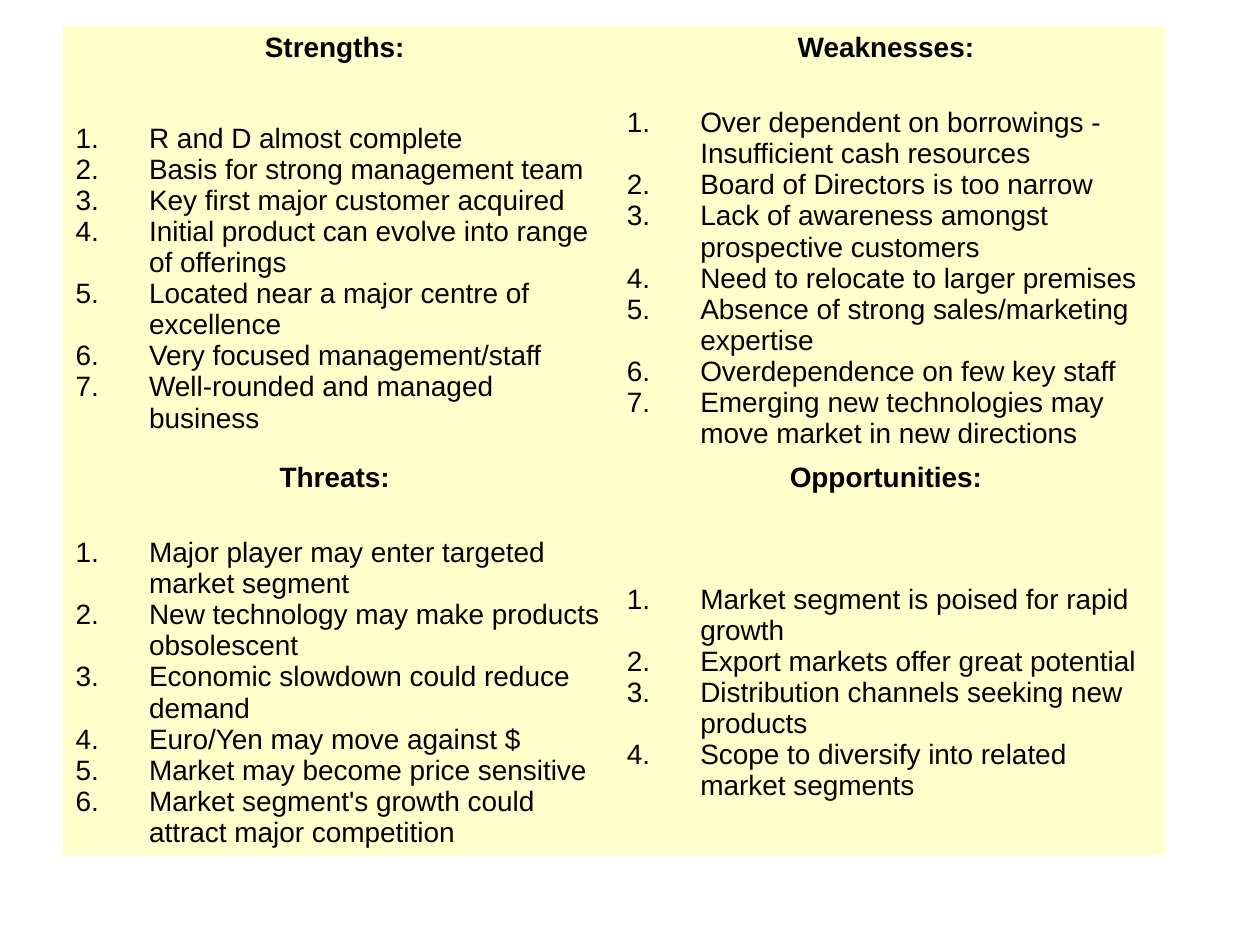
"""Build a SWOT slide: four headed, numbered lists in one table."""

from dataclasses import dataclass

import pptx
import pptx.dml.color
import pptx.enum.text
import pptx.oxml
import pptx.oxml.ns
import pptx.util


@dataclass(frozen=True)
class Theme:
    font: str = "Arial"
    size: int = 16
    text: str = "000000"
    panel: str = "FFFFCC"


theme = Theme()
Pt = pptx.util.Pt
RGBColor = pptx.dml.color.RGBColor
qn = pptx.oxml.ns.qn

COLUMN_WIDTH = 315
ROW_HEIGHTS = [25, 220.5, 25, 203]
LIST_INDENT = 42
LIST_TOP_MARGIN = 21.4
NO_STYLE_NO_GRID = "{2D5ABB26-0587-4C30-8999-92F81FD0307C}"

quadrants = [
    ("Strengths: ", [
        "R and D almost complete",
        "Basis for strong management team",
        "Key first major customer acquired",
        "Initial product can evolve into range of offerings",
        "Located near a major centre of excellence",
        "Very focused management/staff",
        "Well-rounded and managed business",
    ]),
    ("Weaknesses: ", [
        "Over dependent on borrowings - Insufficient cash resources",
        "Board of Directors is too narrow",
        "Lack of awareness amongst prospective customers",
        "Need to relocate to larger premises",
        "Absence of strong sales/marketing expertise",
        "Overdependence on few key staff",
        "Emerging new technologies may move market in new directions",
    ]),
    ("Threats: ", [
        "Major player may enter targeted market segment",
        "New technology may make products obsolescent",
        "Economic slowdown could reduce demand",
        "Euro/Yen may move against $",
        "Market may become price sensitive",
        "Market segment's growth could attract major competition",
    ]),
    ("Opportunities: ", [
        "Market segment is poised for rapid growth",
        "Export markets offer great potential",
        "Distribution channels seeking new products",
        "Scope to diversify into related market segments",
    ]),
]


def fill_cell(cell, lines, bold):
    """Write one paragraph per line on the panel colour."""
    cell.fill.solid()
    cell.fill.fore_color.rgb = RGBColor.from_string(theme.panel)
    cell.vertical_anchor = pptx.enum.text.MSO_ANCHOR.MIDDLE
    cell.text_frame.text = "\n".join(lines)
    for paragraph in cell.text_frame.paragraphs:
        font = paragraph.runs[0].font
        font.name = theme.font
        font.size = Pt(theme.size)
        font.bold = bold
        font.color.rgb = RGBColor.from_string(theme.text)


def number_paragraph(paragraph):
    """Give a paragraph a hanging indent and an automatic number."""
    properties = paragraph._p.get_or_add_pPr()
    properties.set("marL", str(Pt(LIST_INDENT)))
    properties.set("indent", str(-Pt(LIST_INDENT)))
    numbering = pptx.oxml.parse_xml(
        f'<a:buAutoNum {pptx.oxml.ns.nsdecls("a")} type="arabicPeriod"/>'
    )
    properties.append(numbering)


presentation = pptx.Presentation()
presentation.slide_width = Pt(720)
presentation.slide_height = Pt(540)
slide = presentation.slides.add_slide(presentation.slide_layouts[6])

table_frame = slide.shapes.add_table(
    4, 2, Pt(36), Pt(15), Pt(2 * COLUMN_WIDTH), Pt(sum(ROW_HEIGHTS))
)
table_frame.element.find(".//" + qn("a:tableStyleId")).text = NO_STYLE_NO_GRID
table = table_frame.table
table.first_row = False
table.horz_banding = False
for column in table.columns:
    column.width = Pt(COLUMN_WIDTH)
for row, height in zip(table.rows, ROW_HEIGHTS):
    row.height = Pt(height)

for index, (heading, items) in enumerate(quadrants):
    band, column_index = divmod(index, 2)

    heading_cell = table.cell(2 * band, column_index)
    fill_cell(heading_cell, [heading], bold=True)
    heading_cell.text_frame.paragraphs[0].alignment = pptx.enum.text.PP_ALIGN.CENTER

    list_cell = table.cell(2 * band + 1, column_index)
    list_cell.margin_top = Pt(LIST_TOP_MARGIN)
    fill_cell(list_cell, items, bold=False)
    for paragraph in list_cell.text_frame.paragraphs:
        number_paragraph(paragraph)

presentation.save("out.pptx")
